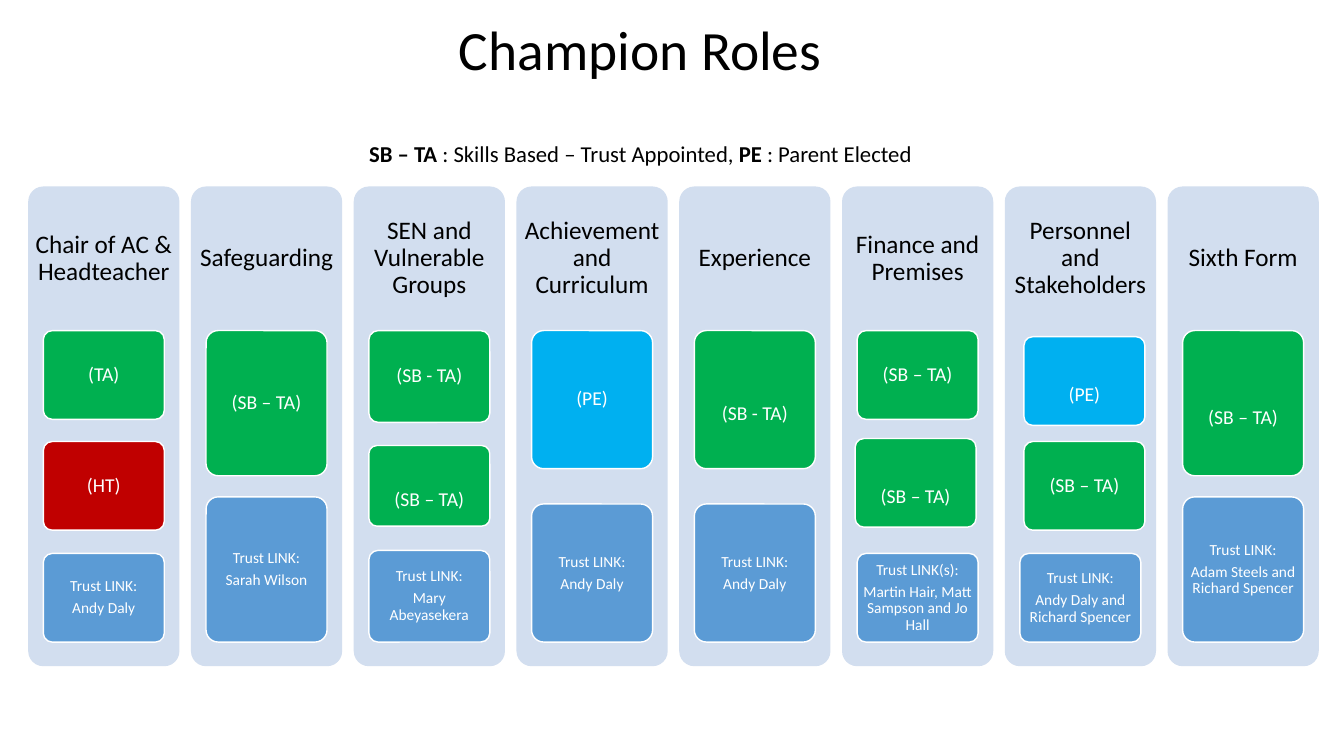
from dataclasses import dataclass

from pptx import Presentation
from pptx.dml.color import RGBColor
from pptx.enum import shapes, text
from pptx.util import Inches, Pt


@dataclass(frozen=True)
class Theme:
    font: str = "Calibri"
    black: str = "000000"
    white: str = "FFFFFF"
    panel: str = "D2DEEF"
    green: str = "00B050"
    red: str = "C00000"
    cyan: str = "00B0F0"
    blue: str = "5B9BD5"
    title: float = 39.6
    legend: float = 16.2
    heading: float = 18
    role: float = 14
    link: float = 11


@dataclass(frozen=True)
class Card:
    lines: tuple
    fill: str
    top: float
    height: float
    nudge: float = 0
    drop: float = 0  # extra top inset that lowers the label
    size: float = Theme.role


def write(box, lines, size, color, inset_x, inset_y, drop=0):
    """Fill a shape with centred, middle-anchored paragraphs."""
    frame = box.text_frame
    frame.word_wrap = True
    frame.vertical_anchor = text.MSO_ANCHOR.MIDDLE
    frame.margin_left = frame.margin_right = Inches(inset_x)
    frame.margin_top = Inches(inset_y + drop)
    frame.margin_bottom = Inches(inset_y)
    frame.text = "\n".join(lines)
    for index, para in enumerate(frame.paragraphs):
        para.alignment = text.PP_ALIGN.CENTER
        para.line_spacing = 0.9
        if index:
            para.space_before = Pt(3.8)
        for span in para.runs:
            span.font.name = theme.font
            span.font.size = Pt(size)
            span.font.color.rgb = RGBColor.from_string(color)


def add_rounded(left, top, width, height, fill):
    box = page.shapes.add_shape(
        shapes.MSO_SHAPE.ROUNDED_RECTANGLE,
        Inches(left), Inches(top), Inches(width), Inches(height))
    box.adjustments[0] = 0.1
    box.shadow.inherit = False
    box.fill.solid()
    box.fill.fore_color.rgb = RGBColor.from_string(fill)
    box.line.fill.background()
    return box


theme = Theme()
FIRST_LEFT, PITCH = 0.28, 11.3 / 7
PANEL_TOP, PANEL_WIDTH, PANEL_HEIGHT = 1.85, 1.5, 4.76
HEADING_HEIGHT = 1.43
CARD_INDENT, CARD_WIDTH = 0.15, 1.2
CARDS_TOP, CARDS_BOTTOM = 3.28, 6.37
LOWERED = 0.29

# Heading, role cards, trust link label, trust link names, link card height
columns = [
    ("Chair of AC & Headteacher",
     [Card(("(TA)",), theme.green, CARDS_TOP, 0.88),
      Card(("(HT)",), theme.red, 4.38, 0.88)],
     "Trust LINK:", "Andy Daly", 0.88),
    ("Safeguarding",
     [Card(("(SB – TA)",), theme.green, CARDS_TOP, 1.44)],
     "Trust LINK:", "Sarah Wilson", 1.44),
    ("SEN and Vulnerable Groups",
     [Card(("(SB - TA)",), theme.green, CARDS_TOP, 0.91),
      Card(("(SB – TA)",), theme.green, 4.42, 0.8, drop=LOWERED)],
     "Trust LINK:", "Mary Abeyasekera", 0.91),
    ("Achievement and Curriculum",
     [Card(("(PE)",), theme.cyan, CARDS_TOP, 1.37)],
     "Trust LINK:", "Andy Daly", 1.37),
    ("Experience",
     [Card(("(SB - TA)",), theme.green, CARDS_TOP, 1.37, drop=LOWERED)],
     "Trust LINK:", "Andy Daly", 1.37),
    ("Finance and Premises",
     [Card(("(SB – TA)",), theme.green, CARDS_TOP, 0.88),
      Card(("(SB – TA)",), theme.green, 4.35, 0.88, -0.02, LOWERED)],
     "Trust LINK(s):", "Martin Hair, Matt Sampson and Jo Hall", 0.88),
    ("Personnel and Stakeholders",
     [Card(("(PE)",), theme.cyan, 3.34, 0.88, 0.04, LOWERED),
      Card(("(SB – TA)",), theme.green, 4.38, 0.88, 0.04)],
     "Trust LINK:", "Andy Daly and Richard Spencer", 0.88),
    ("Sixth Form",
     [Card(("(SB – TA)",), theme.green, CARDS_TOP, 1.44, drop=LOWERED)],
     "Trust LINK:", "Adam Steels and Richard Spencer", 1.44),
]

deck = Presentation()
deck.slide_width, deck.slide_height = Inches(13.33), Inches(7.5)
page = deck.slides.add_slide(deck.slide_layouts[5])

title = page.shapes.title
title.left, title.top = Inches(0.27), Inches(0.22)
title.width, title.height = Inches(12.16), Inches(1.45)
write(title, ["Champion Roles"], theme.title, theme.black, 0.1, 0.05)
title.text_frame.auto_size = text.MSO_AUTO_SIZE.NONE
legend = title.text_frame.add_paragraph()
legend.alignment = text.PP_ALIGN.CENTER
legend.line_spacing = 0.9
legend.space_before = Pt(43.5)
for words, bold in [("SB – TA ", True),
                    (": Skills Based – Trust Appointed, ", False),
                    ("PE", True), (" : Parent Elected", False)]:
    span = legend.add_run()
    span.text = words
    span.font.name = theme.font
    span.font.size = Pt(theme.legend)
    span.font.bold = bold
    span.font.color.rgb = RGBColor.from_string(theme.black)

for number, (heading, roles, label, names, link_height) in enumerate(columns):
    left = FIRST_LEFT + number * PITCH
    add_rounded(left, PANEL_TOP, PANEL_WIDTH, PANEL_HEIGHT, theme.panel)
    heading_box = page.shapes.add_textbox(
        Inches(left), Inches(PANEL_TOP), Inches(PANEL_WIDTH), Inches(HEADING_HEIGHT))
    write(heading_box, [heading], theme.heading, theme.black, 0.07, 0.07)

    link = Card((label, names), theme.blue, CARDS_BOTTOM - link_height,
                link_height, size=theme.link)
    for card in roles + [link]:
        box = add_rounded(left + CARD_INDENT + card.nudge, card.top,
                          CARD_WIDTH, card.height, card.fill)
        box.line.color.rgb = RGBColor.from_string(theme.white)
        box.line.width = Pt(1)
        write(box, card.lines, card.size, theme.white, 0.03, 0.02, card.drop)

deck.save("out.pptx")
